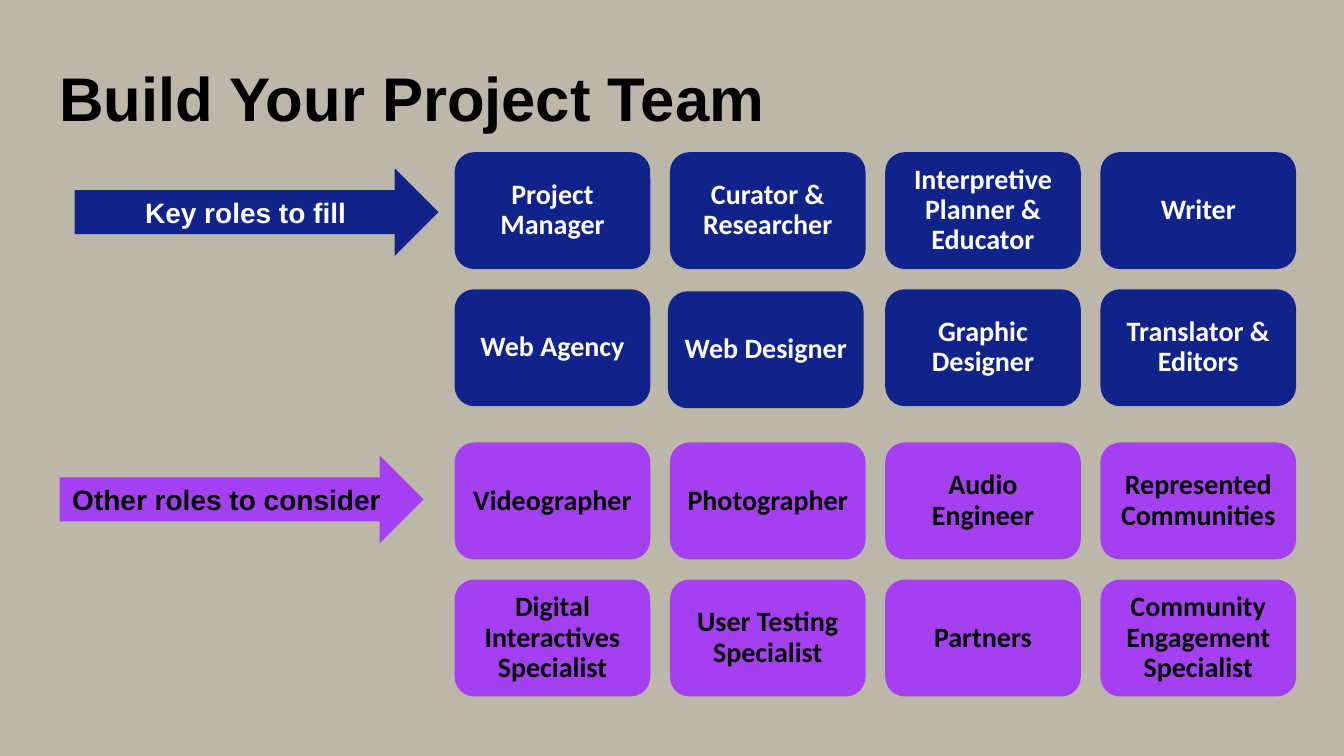
import pptx
import pptx.dml.color
import pptx.enum.shapes
import pptx.enum.text
import pptx.util

Inches = pptx.util.Inches
Pt = pptx.util.Pt
SHAPES = pptx.enum.shapes.MSO_SHAPE
ANCHOR = pptx.enum.text.MSO_ANCHOR
ALIGN = pptx.enum.text.PP_ALIGN

TITLE = "Build Your Project Team"
ROLE_GROUPS = [
    {
        "label": "Key roles to fill",
        "arrow": (0.74, 1.67),
        "cards_top": 1.51,
        "colors": ("navy", "white"),
        "roles": [
            "Project Manager", "Curator & Researcher",
            "Interpretive Planner & Educator", "Writer",
            "Web Agency", "Web Designer", "Graphic Designer", "Translator & Editors",
        ],
    },
    {
        "label": "Other roles to consider ",
        "arrow": (0.59, 4.52),
        "cards_top": 4.39,
        "colors": ("purple", "black"),
        "roles": [
            "Videographer", "Photographer", "Audio Engineer", "Represented Communities",
            "Digital Interactives Specialist", "User Testing Specialist",
            "Partners", "Community Engagement Specialist",
        ],
    },
]
NUDGES = {"Web Designer": (-0.02, 0.02)}

THEME = {
    "background": "BDB7AA", "navy": "10238B", "purple": "A540F2",
    "white": "FFFFFF", "black": "000000",
    "heading_font": "Arial", "card_font": "Calibri",
    "title_size": 44, "label_size": 20,
}

COLUMNS = 4
CARDS_LEFT = 4.51
CARD_SIZE = (1.94, 1.16)
CARD_PITCH = (2.135, 1.36)
CARD_INSET = 0.08
ARROW_SIZE = (3.61, 0.87)


def color(name):
    return pptx.dml.color.RGBColor.from_string(THEME[name])


def set_text(shape, text, font_name, size, color_name):
    paragraph = shape.text_frame.paragraphs[0]
    paragraph.text = text
    font = paragraph.font
    font.name, font.size, font.bold = font_name, Pt(size), True
    font.color.rgb = color(color_name)
    return paragraph


def set_insets(frame, left, top, right, bottom):
    frame.margin_left, frame.margin_top = Inches(left), Inches(top)
    frame.margin_right, frame.margin_bottom = Inches(right), Inches(bottom)


def add_label_shape(slide, kind, position, size, text, font_name, colors):
    """Add a filled shape with a centred bold label."""
    shape = slide.shapes.add_shape(kind, *map(Inches, position + size))
    shape.shadow.inherit = False
    shape.fill.solid()
    shape.fill.fore_color.rgb = color(colors[0])
    shape.line.fill.background()
    shape.text_frame.word_wrap = True
    shape.text_frame.vertical_anchor = ANCHOR.MIDDLE
    paragraph = set_text(shape, text, font_name, THEME["label_size"], colors[1])
    paragraph.alignment = ALIGN.CENTER
    return shape


def add_title(slide):
    box = slide.shapes.add_textbox(*map(Inches, (0.59, 0.49, 8.84, 1.94)))
    box.text_frame.word_wrap = True
    set_insets(box.text_frame, 0, 0, 0, 0.28)
    paragraph = set_text(box, TITLE, THEME["heading_font"], THEME["title_size"], "black")
    paragraph.line_spacing = Pt(60)


def add_role_group(slide, group):
    add_label_shape(slide, SHAPES.RIGHT_ARROW, group["arrow"], ARROW_SIZE,
                    group["label"], THEME["heading_font"], group["colors"])
    for index, role in enumerate(group["roles"]):
        row, column = divmod(index, COLUMNS)
        shift_x, shift_y = NUDGES.get(role, (0, 0))
        position = (CARDS_LEFT + column * CARD_PITCH[0] + shift_x,
                    group["cards_top"] + row * CARD_PITCH[1] + shift_y)
        card = add_label_shape(slide, SHAPES.ROUNDED_RECTANGLE, position, CARD_SIZE,
                               role, THEME["card_font"], group["colors"])
        set_insets(card.text_frame, *[CARD_INSET] * 4)
        card.text_frame.paragraphs[0].line_spacing = 0.9


def main():
    presentation = pptx.Presentation()
    presentation.slide_width, presentation.slide_height = Inches(13.33), Inches(7.5)
    slide = presentation.slides.add_slide(presentation.slide_layouts[6])
    slide.background.fill.solid()
    slide.background.fill.fore_color.rgb = color("background")
    add_title(slide)
    for group in ROLE_GROUPS:
        add_role_group(slide, group)
    presentation.save("out.pptx")


if __name__ == "__main__":
    main()
